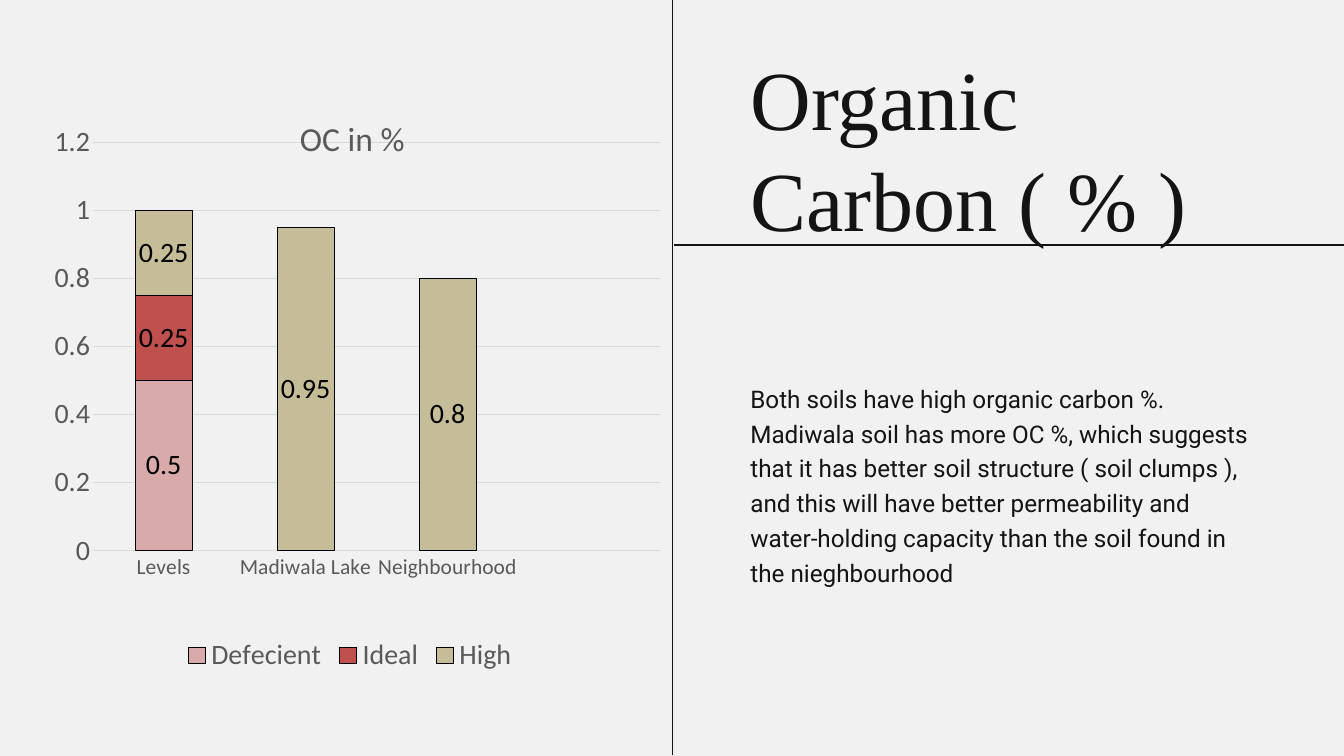
from lxml import etree
from pptx import Presentation
from pptx.chart.data import CategoryChartData
from pptx.dml.color import RGBColor
from pptx.enum.chart import (XL_CHART_TYPE as ChartType, XL_LABEL_POSITION as LabelPosition,
                             XL_LEGEND_POSITION as LegendPosition, XL_TICK_MARK as TickMark)
from pptx.enum.shapes import MSO_CONNECTOR as Connector
from pptx.enum.text import MSO_ANCHOR as Anchor, MSO_AUTO_SIZE as AutoSize, PP_ALIGN as Align
from pptx.oxml.ns import qn
from pptx.util import Pt

EMU_PER_PX = 9525
INK, GREY, RULE, BLACK = "141414", "595959", "D9D9D9", "000000"
LEVELS = [
    ("Defecient", (0.5, None, None, None), "D9AAAA"),
    ("Ideal", (0.25, None, None, None), "C0504D"),
    ("High", (0.25, 0.95, 0.8, None), "C4BD97"),
]
SOILS = ["Levels", "Madiwala Lake", "Neighbourhood", ""]
FINDING = ("Both soils have high organic carbon %. Madiwala soil has more OC %, "
           "which suggests that it has better soil structure ( soil clumps ), "
           "and this will have better permeability and water-holding capacity "
           "than the soil found in the nieghbourhood")


def px(*lengths):
    return [length * EMU_PER_PX for length in lengths]


def color(hex_string):
    return RGBColor.from_string(hex_string)


def style_font(font, name, size, hex_string):
    font.name, font.size, font.bold = name, Pt(size), False
    font.color.rgb = color(hex_string)


def style_line(line, hex_string, width):
    line.color.rgb = color(hex_string)
    line.width = Pt(width)


def set_layout(parent, target, **fractions):
    """Place a chart part by fractions of the chart's size."""
    for old in parent.findall(qn("c:layout")):
        parent.remove(old)
    layout = etree.Element(qn("c:layout"))
    manual = etree.SubElement(layout, qn("c:manualLayout"))
    if target:
        etree.SubElement(manual, qn("c:layoutTarget")).set("val", target)
    for mode in ("xMode", "yMode"):
        etree.SubElement(manual, qn(f"c:{mode}")).set("val", "edge")
    for key, value in fractions.items():
        etree.SubElement(manual, qn(f"c:{key}")).set("val", str(value))
    text = parent.find(qn("c:tx"))
    parent.insert(0 if text is None else 1, layout)


class SlideBuilder:
    chart_font = "Calibri"

    def __init__(self, deck):
        self.page = deck.slides.add_slide(deck.slide_layouts[5])
        fill = self.page.background.fill
        fill.solid()
        fill.fore_color.rgb = color("F1F1F1")

    def line(self, *ends):
        line = self.page.shapes.add_connector(Connector.STRAIGHT, *px(*ends))
        style_line(line.line, INK, 1.5)
        etree.SubElement(line._element.spPr, qn("a:effectLst"))

    def fill_text(self, box, text, font, size, spacing):
        frame = box.text_frame
        frame.word_wrap = True
        frame.auto_size = AutoSize.NONE
        frame.vertical_anchor = Anchor.TOP
        frame.margin_left = frame.margin_right = frame.margin_top = frame.margin_bottom = 0
        para = frame.paragraphs[0]
        para.alignment = Align.LEFT
        para.line_spacing = Pt(spacing)
        span = para.add_run()
        span.text = text
        style_font(span.font, font, size, INK)

    def title(self, text, *place):
        box = self.page.shapes.title
        box.left, box.top, box.width, box.height = px(*place)
        self.fill_text(box, text, "Times New Roman", 90, 108)

    def body(self, text, *place):
        self.fill_text(self.page.shapes.add_textbox(*px(*place)), text, "Roboto", 26, 37.2)

    def stacked_chart(self, title, categories, series, *place):
        data = CategoryChartData()
        data.categories = categories
        for name, values, _ in series:
            data.add_series(name, values)
        chart = self.page.shapes.add_chart(ChartType.COLUMN_STACKED, *px(*place), data).chart
        style_font(chart.font, self.chart_font, 30, BLACK)

        chart.has_title = True
        span = chart.chart_title.text_frame.paragraphs[0].add_run()
        span.text = title
        style_font(span.font, self.chart_font, 36, GREY)
        set_layout(chart.chart_title._element, None, x=0.41, y=0.05)
        set_layout(chart._chartSpace.chart.plotArea, "inner", x=0.1, y=0.105, w=0.914, h=0.682)

        chart.has_legend = True
        chart.legend.position = LegendPosition.BOTTOM
        chart.legend.include_in_layout = False
        style_font(chart.legend.font, self.chart_font, 30, GREY)

        for axis, size in ((chart.category_axis, 23), (chart.value_axis, 30)):
            axis.major_tick_mark = axis.minor_tick_mark = TickMark.NONE
            style_font(axis.tick_labels.font, self.chart_font, size, GREY)
        style_line(chart.category_axis.format.line, RULE, 0.75)
        scale = chart.value_axis
        scale.minimum_scale, scale.maximum_scale, scale.major_unit = 0, 1.2, 0.2
        scale.format.line.fill.background()
        style_line(scale.major_gridlines.format.line, RULE, 0.75)

        plot = chart.plots[0]
        plot.gap_width, plot.overlap, plot.vary_by_categories = 150, 100, False
        for bars, (_, _, fill) in zip(plot.series, series):
            bars.format.fill.solid()
            bars.format.fill.fore_color.rgb = color(fill)
            style_line(bars.format.line, BLACK, 0.75)
            labels = bars.data_labels
            labels.show_value = True
            labels.position = LabelPosition.CENTER
            style_font(labels.font, self.chart_font, 30, BLACK)


def main():
    deck = Presentation()
    deck.slide_width, deck.slide_height = px(1920, 1080)
    slide = SlideBuilder(deck)
    slide.line(961, 1079, 961, -1)
    slide.line(963, 350, 1936, 350)
    slide.body(FINDING, 1072, 541, 725, 295)
    slide.title("Organic Carbon ( % )", 1072, 67, 739, 291)
    slide.stacked_chart("OC in %", SOILS, LEVELS, 56, 113, 888, 856)
    deck.save("out.pptx")


if __name__ == "__main__":
    main()
